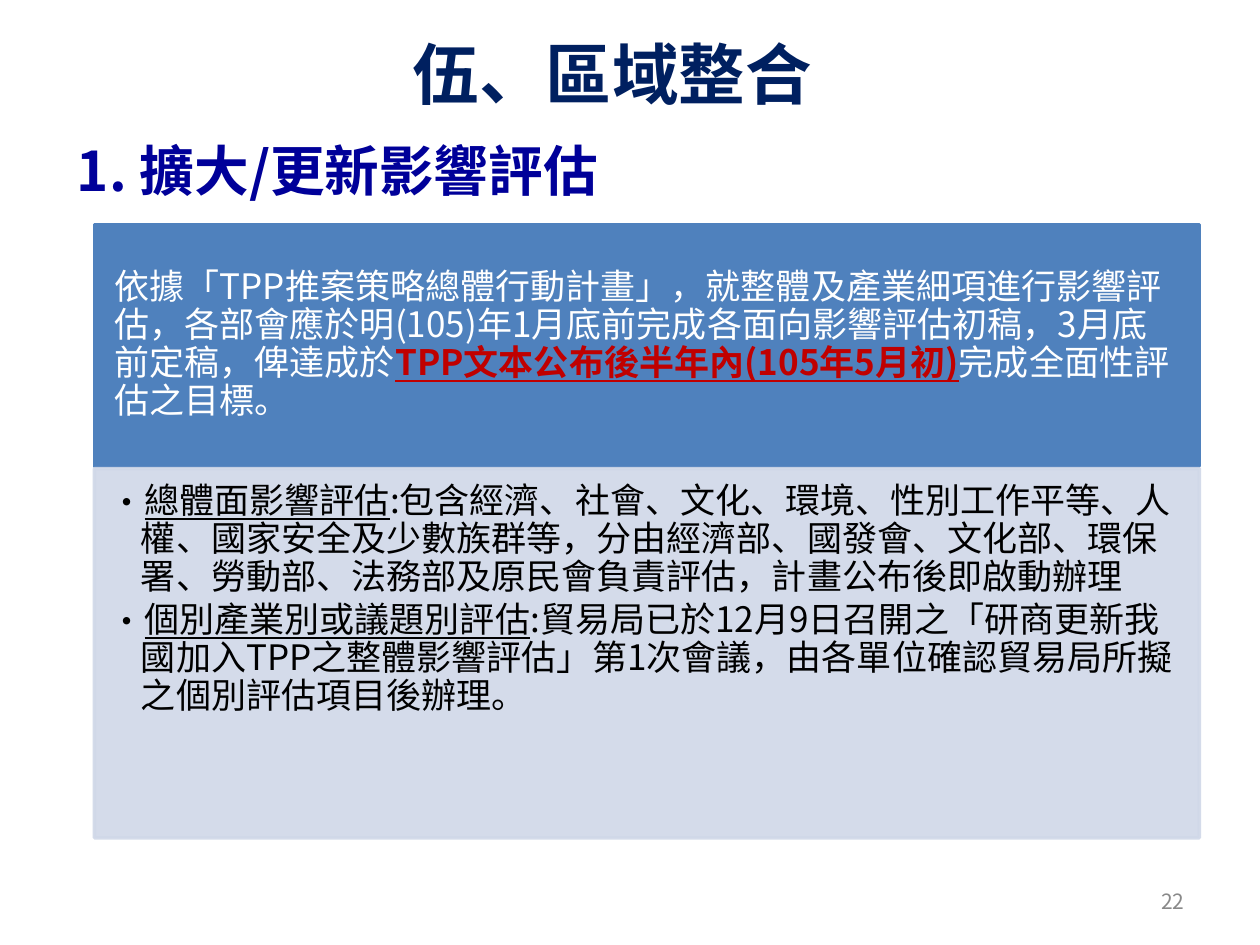
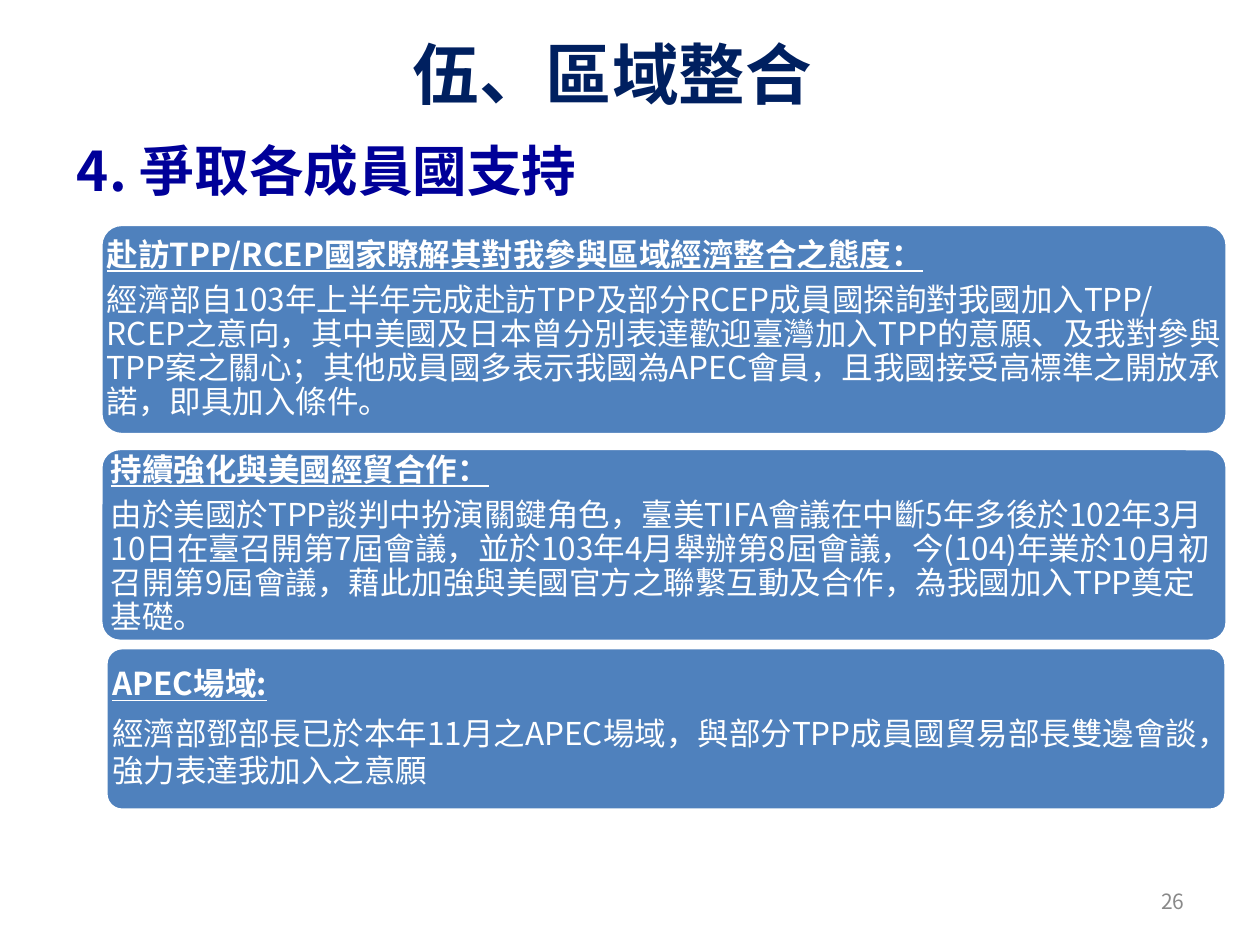
"""Build two slides on regional integration: impact studies and winning support."""
from lxml.etree import SubElement as Sub
from pptx import Presentation as Deck
from pptx.dml.color import RGBColor as Rgb
from pptx.enum.shapes import MSO_SHAPE as Kind
from pptx.enum.text import MSO_ANCHOR as Anchor, MSO_AUTO_SIZE as Auto, PP_ALIGN as Align
from pptx.oxml.ns import qn
from pptx.util import Pt

FONT = "Noto Sans CJK SC"
HUES = {"title": "002060", "head": "000099", "blue": "4F81BD", "pale": "D0D8E8",
        "white": "FFFFFF", "black": "000000", "red": "C00000", "gray": "898989"}
LINED = {"line": True}
STRONG = {"bold": True, "line": True}
ALERT = {"bold": True, "line": True, "hue": "red"}

PLAN = [[("依據「TPP推案策略總體行動計畫」，就整體及產業細項進行影響評估，各部會應於明(105)年1月底前完成各面向影響評估初稿，3月底前定稿，俾達成於", {}),
         ("TPP文本公布後半年內(105年5月初)", ALERT),
         ("完成全面性評估之目標。", {})]]
TASKS = [
    [("總體面影響評估", LINED),
     (":包含經濟、社會、文化、環境、性別工作平等、人權、國家安全及少數族群等，分由經濟部、國發會、文化部、環保署、勞動部、法務部及原民會負責評估，計畫公布後即啟動辦理", {})],
    [("個別產業別或議題別評估", LINED),
     (":貿易局已於12月9日召開之「研商更新我國加入TPP之整體影響評估」第1次會議，由各單位確認貿易局所擬之個別評估項目後辦理。", {})],
]
CARDS = [
    ((57.6, 128.2, 643.7, 120.2), (0, 0), 0.9,
     "赴訪TPP/RCEP國家瞭解其對我參與區域經濟整合之態度：",
     "經濟部自103年上半年完成赴訪TPP及部分RCEP成員國探詢對我國加入TPP/RCEP之意向，其中美國及日本曾分別表達歡迎臺灣加入TPP的意願、及我對參與TPP案之關心；其他成員國多表示我國為APEC會員，且我國接受高標準之開放承諾，即具加入條件。"),
    ((57.6, 256.3, 643.7, 110.2), (2.5, 3), 0.9,
     "持續強化與美國經貿合作：",
     "由於美國於TPP談判中扮演關鍵角色，臺美TIFA會議在中斷5年多後於102年3月10日在臺召開第7屆會議，並於103年4月舉辦第8屆會議，今(104)年業於10月初召開第9屆會議，藉此加強與美國官方之聯繫互動及合作，為我國加入TPP奠定基礎。"),
    ((60.5, 370.1, 640.1, 92.9), (1, 3.8), 1,
     "APEC場域:",
     "經濟部鄧部長已於本年11月之APEC場域，與部分TPP成員國貿易部長雙邊會談，強力表達我加入之意願"),
]


def place(shape, box):
    shape.left, shape.top, shape.width, shape.height = map(Pt, box)


def style(run, size, hue, bold=False, line=False):
    font = run.font
    font.size, font.bold, font.underline = Pt(size), bold, line
    font.color.rgb = Rgb.from_string(HUES[hue])
    font.name = FONT
    Sub(run.font._element, qn("a:ea"), typeface=FONT)


def label(shape, text, size, hue, align, anchor, bold=False):
    frame = shape.text_frame
    frame.text = text
    frame.auto_size = Auto.NONE
    frame.vertical_anchor = anchor
    para = frame.paragraphs[0]
    para.alignment = align
    para.space_before = Pt(0)
    style(para.runs[0], size, hue, bold)
    return frame


def mark(para, dent, tag, **attrs):
    props = para._p.get_or_add_pPr()
    props.set("marL", str(Pt(dent)))
    props.set("indent", str(-Pt(dent)))
    Sub(props, qn("a:buFont"), typeface=FONT)
    Sub(props, qn(tag), **attrs)


def panel(slide, kind, box, fill, edge, clear=False):
    shape = slide.shapes.add_shape(kind, *map(Pt, box))
    shape.shadow.inherit = False
    shape.fill.solid()
    shape.fill.fore_color.rgb = Rgb.from_string(HUES[fill])
    shape.line.color.rgb = Rgb.from_string(HUES[edge])
    shape.line.width = Pt(2)
    if clear:
        for tint in shape._element.spPr.iter(qn("a:srgbClr")):
            Sub(tint, qn("a:alpha"), val="90000")
    return shape


def write(shape, paras, size, hue, pads, gap, anchor=Anchor.MIDDLE, dots=False):
    frame = shape.text_frame
    frame.word_wrap = True
    frame.vertical_anchor = anchor
    (frame.margin_left, frame.margin_top,
     frame.margin_right, frame.margin_bottom) = map(Pt, pads)
    for at, parts in enumerate(paras):
        para = frame.add_paragraph() if at else frame.paragraphs[0]
        para.alignment = Align.LEFT
        para.line_spacing = 0.9
        para.space_after = Pt(gap)
        if dots:
            mark(para, 18, "a:buChar", char="•")
        for text, looks in parts:
            run = para.add_run()
            run.text = text
            style(run, size, **{"hue": hue, **looks})
    return frame


def start(deck, count, head, page):
    slide = deck.slides.add_slide(deck.slide_layouts[1])
    title, body = slide.placeholders
    place(title, (227.5, 15.1, 244.8, 53.3))
    label(title, "伍、區域整合", 38, "title", Align.CENTER, Anchor.TOP, True).word_wrap = False
    place(body, (36.7, 71.3, 648, 51.1))
    frame = label(body, head, 31.2, "head", Align.LEFT, Anchor.MIDDLE, True)
    mark(frame.paragraphs[0], 36, "a:buAutoNum", type="arabicPeriod", startAt=str(count))
    foot = slide.shapes.add_textbox(*map(Pt, (516.2, 500.4, 167.8, 28.8)))
    label(foot, page, 12, "gray", Align.RIGHT, Anchor.MIDDLE).word_wrap = True
    return slide


def card(slide, box, sides, space, head, text):
    shape = panel(slide, Kind.ROUNDED_RECTANGLE, box, "blue", "white")
    shape.adjustments[0] = 0.1
    left, right = sides
    frame = write(shape, [[(head, STRONG)], [(text, {})]], 18, "white",
                  (left, 0, right, 0), 6.3)
    frame.paragraphs[1].line_spacing = space


def main():
    deck = Deck()
    deck.slide_width, deck.slide_height = Pt(720), Pt(540)

    slide = start(deck, 1, "擴大/更新影響評估", "22")
    top = panel(slide, Kind.RECTANGLE, (54, 128.2, 631.4, 138.2), "blue", "blue")
    write(top, PLAN, 20, "white", (11.5, 6.5, 11.5, 6.5), 7)
    low = panel(slide, Kind.RECTANGLE, (54, 267.8, 631.4, 211), "pale", "pale", True)
    write(low, TASKS, 20, "black", (8.6, 8.6, 11.5, 12.2), 3, Anchor.TOP, True)

    slide = start(deck, 4, "爭取各成員國支持", "26")
    for item in CARDS:
        card(slide, *item)

    deck.save("out.pptx")


if __name__ == "__main__":
    main()
